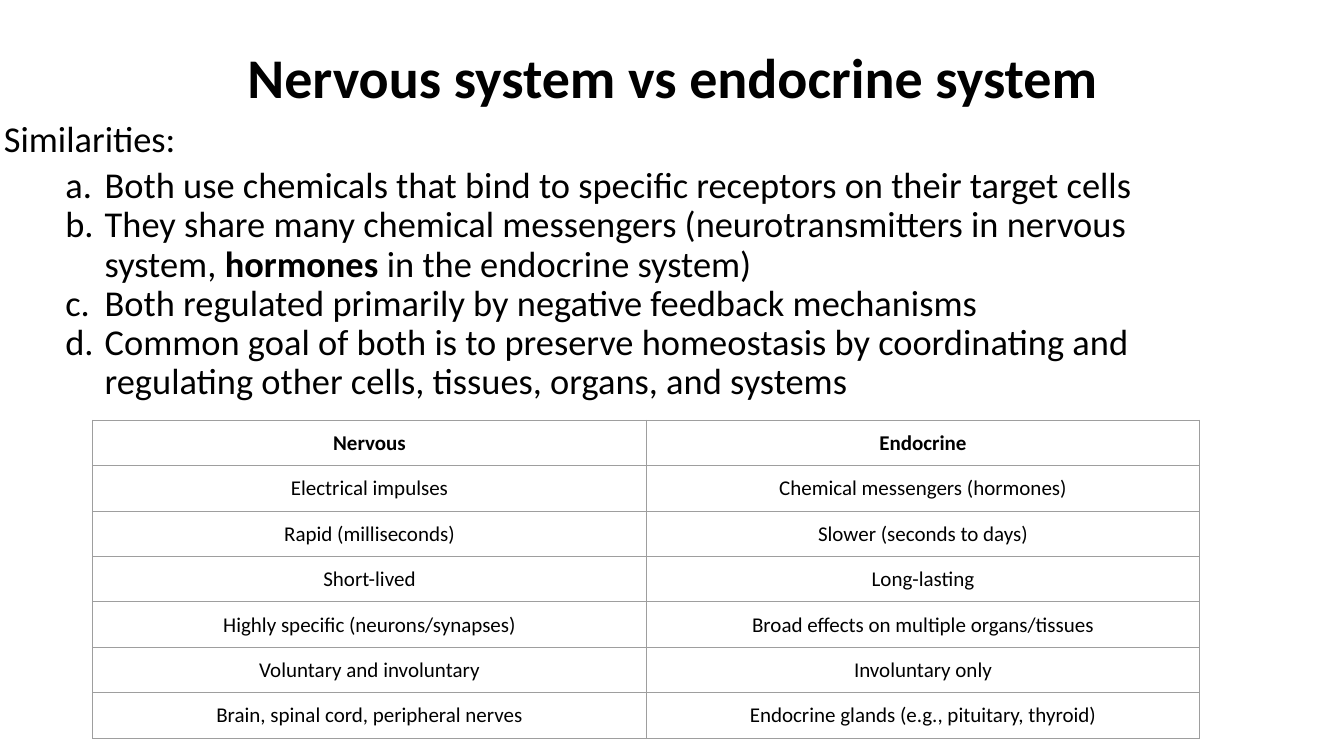
from lxml.etree import SubElement
from pptx import Presentation
from pptx.dml.color import RGBColor
from pptx.enum.text import MSO_ANCHOR, PP_ALIGN
from pptx.oxml.ns import qn
from pptx.util import Inches, Pt

WIDE, HIGH = Inches(13.33), Inches(7.5)
BLACK = RGBColor(0x00, 0x00, 0x00)
GRAY = RGBColor(0x9E, 0x9E, 0x9E)
FONT = "Calibri"

POINTS = [
    ["Both use chemicals that bind to specific receptors on their target cells"],
    ["They share many chemical messengers (neurotransmitters in nervous system, ",
     "hormones", " in the endocrine system)"],
    ["Both regulated primarily by negative feedback mechanisms"],
    ["Common goal of both is to preserve homeostasis by coordinating and "
     "regulating other cells, tissues, organs, and systems"],
]
ROWS = [
    ("Nervous", "Endocrine"),
    ("Electrical impulses", "Chemical messengers (hormones)"),
    ("Rapid (milliseconds)", "Slower (seconds to days)"),
    ("Short-lived", "Long-lasting"),
    ("Highly specific (neurons/synapses)", "Broad effects on multiple organs/tissues"),
    ("Voluntary and involuntary", "Involuntary only"),
    ("Brain, spinal cord, peripheral nerves", "Endocrine glands (e.g., pituitary, thyroid)"),
]


def place(left, top, width, height):
    """Turn shares of the slide's size into lengths."""
    return (round(WIDE * left), round(HIGH * top),
            round(WIDE * width), round(HIGH * height))


def write(para, text, size=26, bold=False, align=PP_ALIGN.LEFT, space=None, gap=0):
    """Add one run of text and format its paragraph."""
    para.alignment = align
    para.line_spacing = space
    para.space_before = Pt(gap)
    run = para.add_run()
    run.text = text
    font = run.font
    font.name, font.size, font.bold = FONT, Pt(size), bold
    font.color.rgb = BLACK


def add_box(slide, spot, anchor=MSO_ANCHOR.TOP):
    frame = slide.shapes.add_textbox(*spot).text_frame
    frame.word_wrap = True
    frame.vertical_anchor = anchor
    return frame


def letter(para):
    """Number the paragraph a., b., c. with a hanging indent."""
    props = para._p.get_or_add_pPr()
    props.set("marL", str(Inches(1)))
    props.set("indent", str(Inches(-0.39)))
    tint = SubElement(props, qn("a:buClr"))
    SubElement(tint, qn("a:srgbClr"), val=str(BLACK))
    SubElement(props, qn("a:buFont"), typeface=FONT)
    SubElement(props, qn("a:buAutoNum"), type="alphaLcPeriod")


def border(cell):
    props = cell._tc.get_or_add_tcPr()
    for side in ("lnL", "lnR", "lnT", "lnB"):
        line = SubElement(props, qn(f"a:{side}"), w=str(Pt(0.75)))
        fill = SubElement(line, qn("a:solidFill"))
        SubElement(fill, qn("a:srgbClr"), val=str(GRAY))


def add_grid(slide, rows, spot):
    table = slide.shapes.add_table(len(rows), len(rows[0]), *spot).table
    table.horz_banding = False
    for r, row in enumerate(rows):
        for c, text in enumerate(row):
            cell = table.cell(r, c)
            cell.margin_left = cell.margin_right = Inches(0.1)
            cell.margin_top = cell.margin_bottom = Inches(0.1)
            border(cell)
            cell.fill.background()
            write(cell.text_frame.paragraphs[0], text, size=15,
                  bold=r == 0, align=PP_ALIGN.CENTER)


def main():
    deck = Presentation()
    deck.slide_width, deck.slide_height = WIDE, HIGH
    slide = deck.slides.add_slide(deck.slide_layouts[6])

    # Title
    title = add_box(slide, place(0.069, 0.0093, 0.8627, 0.1933), MSO_ANCHOR.MIDDLE)
    write(title.paragraphs[0], "Nervous system vs endocrine system",
          size=40, bold=True, align=PP_ALIGN.CENTER, space=0.9)

    # Similarities
    body = add_box(slide, place(-0.0045, 0.1533, 0.8965, 0.7773))
    write(body.paragraphs[0], "Similarities:", space=0.9)
    for n, parts in enumerate(POINTS):
        para = body.add_paragraph()
        for text in parts:
            write(para, text, bold=text == "hormones", space=0.9, gap=0 if n else 5)
        letter(para)

    # Differences
    add_grid(slide, ROWS, place(0.069, 0.556, 0.8237, 0.392))

    deck.save("out.pptx")


if __name__ == "__main__":
    main()
